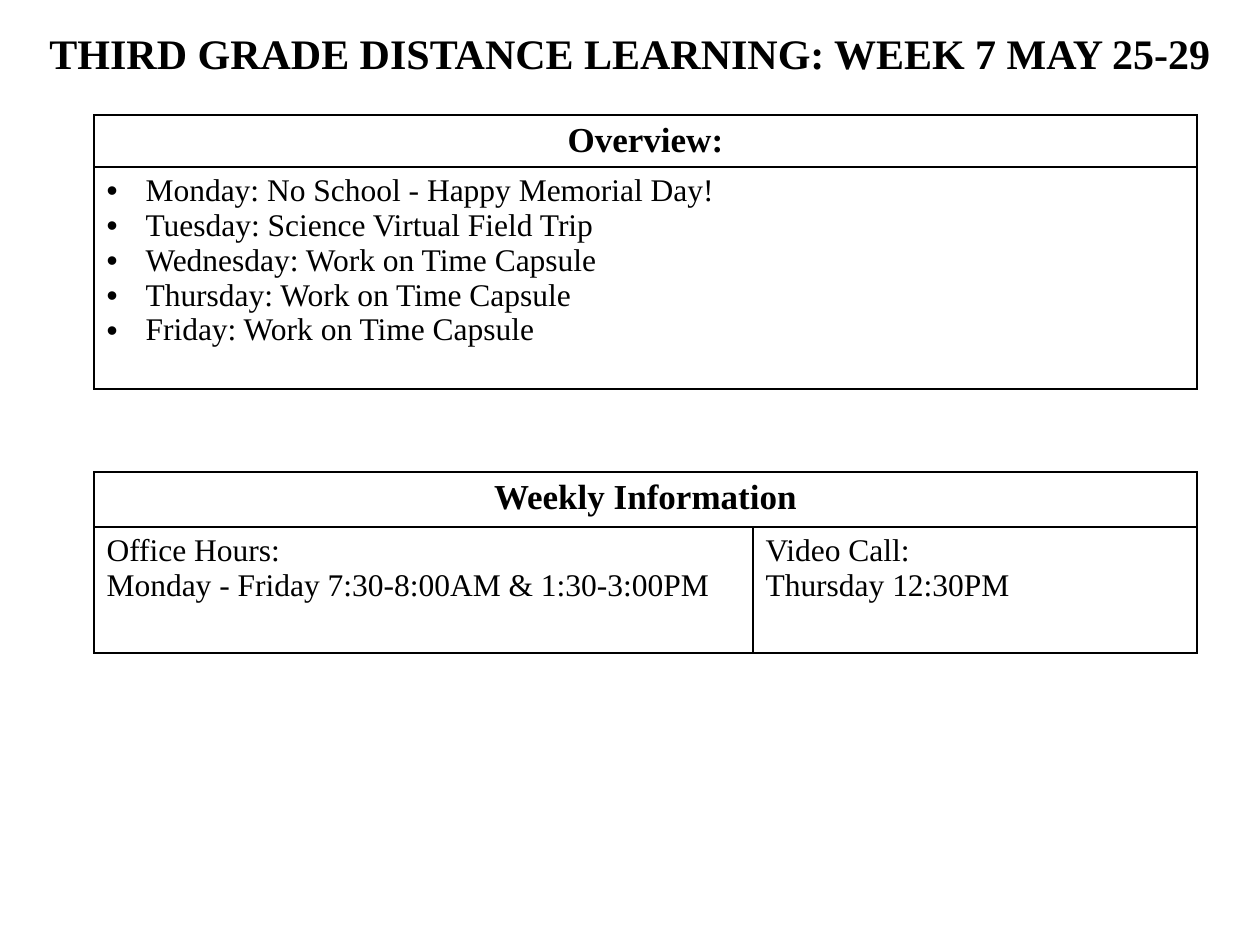
from lxml import etree
from pptx import Presentation
from pptx.dml.color import RGBColor
from pptx.enum.text import PP_ALIGN
from pptx.oxml.ns import qn
from pptx.util import Pt

CENTER = PP_ALIGN.CENTER
LEFT = PP_ALIGN.LEFT
EMU_PER_PX = 914400 / 126
BORDER_SIDES = ("a:lnL", "a:lnR", "a:lnT", "a:lnB")


def px(length):
    return round(length * EMU_PER_PX)


def color(value):
    return RGBColor.from_string(value)


class SlideBuilder:
    font = "Times New Roman"
    ink = "000000"
    paper = "FFFFFF"
    title_size = 24
    heading_size = 20
    body_size = 18
    border_width = 1
    bullet_indent = 39

    def __init__(self, slide):
        self.slide = slide

    def add_lines(self, frame, lines, size, bold=False, align=LEFT, bullets=False):
        frame.word_wrap = True
        for index, line in enumerate(lines):
            paragraph = frame.add_paragraph() if index else frame.paragraphs[0]
            paragraph.alignment = align
            if bullets:
                self.bullet(paragraph)
            run = paragraph.add_run()
            run.text = line
            run.font.name = self.font
            run.font.size = Pt(size)
            run.font.bold = bold
            run.font.color.rgb = color(self.ink)

    def bullet(self, paragraph):
        properties = paragraph._p.get_or_add_pPr()
        properties.set("marL", str(px(self.bullet_indent)))
        properties.set("indent", str(-px(self.bullet_indent)))
        etree.SubElement(properties, qn("a:buFont"), typeface="Arial")
        etree.SubElement(properties, qn("a:buChar"), char="•")

    def title(self, text, left, top, width, height):
        shape = self.slide.shapes.add_textbox(px(left), px(top), px(width), px(height))
        self.add_lines(shape.text_frame, [text], self.title_size, bold=True, align=CENTER)

    def style_cell(self, cell):
        cell.fill.solid()
        cell.fill.fore_color.rgb = color(self.paper)
        properties = cell._tc.get_or_add_tcPr()
        for index, side in enumerate(BORDER_SIDES):
            line = etree.Element(qn(side), w=str(Pt(self.border_width)))
            fill = etree.SubElement(line, qn("a:solidFill"))
            etree.SubElement(fill, qn("a:srgbClr"), val=self.ink)
            properties.insert(index, line)

    def table(self, left, top, column_widths, row_heights, heading, bodies, bullets=False):
        shape = self.slide.shapes.add_table(
            len(row_heights), len(column_widths), px(left), px(top),
            px(sum(column_widths)), px(sum(row_heights)))
        table = shape.table
        for column, width in zip(table.columns, column_widths):
            column.width = px(width)
        for row, height in zip(table.rows, row_heights):
            row.height = px(height)
        for cell in table.iter_cells():
            self.style_cell(cell)
        heading_cell = table.cell(0, 0)
        if len(column_widths) > 1:
            heading_cell.merge(table.cell(0, len(column_widths) - 1))
        self.add_lines(heading_cell.text_frame, [heading], self.heading_size,
                       bold=True, align=CENTER)
        for index, lines in enumerate(bodies):
            self.add_lines(table.cell(1, index).text_frame, lines, self.body_size,
                           bullets=bullets)


def main():
    presentation = Presentation()
    presentation.slide_width = px(1260)
    presentation.slide_height = px(945)
    builder = SlideBuilder(presentation.slides.add_slide(presentation.slide_layouts[6]))

    builder.table(94, 115, [1103], [52, 222], "Overview:", [[
        "Monday: No School - Happy Memorial Day!",
        "Tuesday: Science Virtual Field Trip",
        "Wednesday: Work on Time Capsule",
        "Thursday: Work on Time Capsule",
        "Friday: Work on Time Capsule",
    ]], bullets=True)
    builder.title("THIRD GRADE DISTANCE LEARNING: WEEK 7 MAY 25-29", 0, 21, 1260, 63)
    builder.table(94, 472, [659, 444], [55, 126], "Weekly Information", [
        ["Office Hours:", "Monday - Friday 7:30-8:00AM & 1:30-3:00PM"],
        ["Video Call:", "Thursday 12:30PM"],
    ])
    presentation.save("out.pptx")


if __name__ == "__main__":
    main()
